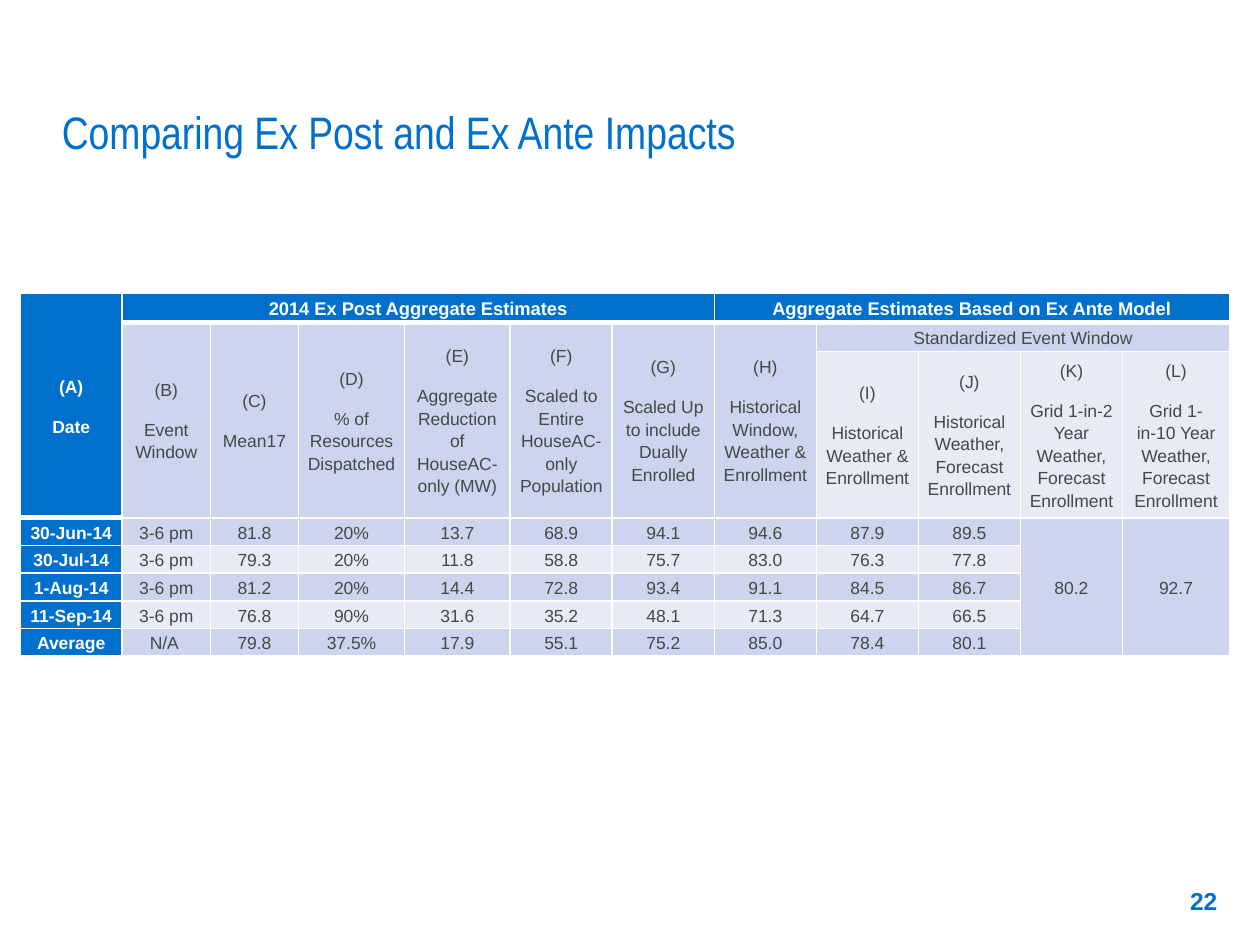
from pptx import Presentation
from pptx.dml.color import RGBColor
from pptx.enum.text import MSO_ANCHOR, MSO_AUTO_SIZE, PP_ALIGN
from pptx.oxml import parse_xml
from pptx.oxml.ns import nsdecls
from pptx.util import Inches, Pt

BLUE = RGBColor(0x00, 0x70, 0xCD)
DARK = RGBColor(0xCC, 0xD5, 0xED)
PALE = RGBColor(0xE7, 0xEB, 0xF6)
GREY = RGBColor(0x46, 0x47, 0x49)
WHITE = RGBColor(0xFF, 0xFF, 0xFF)

# Content
TITLE = "Comparing Ex Post and Ex Ante Impacts"
PAGE = "22"
# (row, column, rows spanned, columns spanned, paragraphs)
HEADS = [
    (0, 0, 3, 1, ["(A)", "Date"]),
    (0, 1, 1, 6, ["2014 Ex Post Aggregate Estimates"]),
    (0, 7, 1, 5, ["Aggregate Estimates Based on Ex Ante Model"]),
    (1, 1, 2, 1, ["(B)", "Event Window"]),
    (1, 2, 2, 1, ["(C)", "Mean17"]),
    (1, 3, 2, 1, ["(D)", "% of Resources Dispatched"]),
    (1, 4, 2, 1, ["(E)", "Aggregate Reduction of HouseAC-only (MW)"]),
    (1, 5, 2, 1, ["(F)", "Scaled to Entire HouseAC-only Population"]),
    (1, 6, 2, 1, ["(G)", "Scaled Up to include Dually Enrolled"]),
    (1, 7, 2, 1, ["(H)", "Historical Window, Weather & Enrollment"]),
    (1, 8, 1, 4, ["Standardized Event Window"]),
    (2, 8, 1, 1, ["(I)", "Historical Weather & Enrollment"]),
    (2, 9, 1, 1, ["(J)", "Historical Weather, Forecast Enrollment"]),
    (2, 10, 1, 1, ["(K)", "Grid 1-in-2 Year Weather, Forecast Enrollment"]),
    (2, 11, 1, 1, ["(L)", "Grid 1-in-10 Year Weather, Forecast Enrollment"]),
]
DAYS = [
    ["30-Jun-14", "3-6 pm", "81.8", "20%", "13.7", "68.9", "94.1", "94.6", "87.9", "89.5"],
    ["30-Jul-14", "3-6 pm", "79.3", "20%", "11.8", "58.8", "75.7", "83.0", "76.3", "77.8"],
    ["1-Aug-14", "3-6 pm", "81.2", "20%", "14.4", "72.8", "93.4", "91.1", "84.5", "86.7"],
    ["11-Sep-14", "3-6 pm", "76.8", "90%", "31.6", "35.2", "48.1", "71.3", "64.7", "66.5"],
    ["Average", "N/A ", "79.8", "37.5%", "17.9", "55.1", "75.2", "85.0", "78.4", "80.1"],
]
YEARS = ["80.2", "92.7"]

# Grid in inches
COLS = [0.81, 0.7, 0.7, 0.84, 0.84] + [0.81] * 6 + [0.85]
TOP = [0.23, 0.23, 1.32]
ROWS = TOP + [0.22] * len(DAYS)


def edge(cell, side, width):
    cell._tc.get_or_add_tcPr().append(parse_xml(
        f'<a:ln{side} {nsdecls("a")} w="{Pt(width)}"><a:solidFill>'
        f'<a:srgbClr val="{WHITE}"/></a:solidFill></a:ln{side}>'))


def style(cell, row, col):
    """White borders, heavier under the blue heads, and banded fill."""
    heavy = row == 0 or (col == 0 and row < len(TOP))
    for side in "LRTB":
        edge(cell, side, 3 if side == "B" and heavy else 1)
    cell.fill.solid()
    cell.fill.fore_color.rgb = (
        BLUE if row == 0 or col == 0 else DARK if row % 2 else PALE)
    cell.margin_left = cell.margin_right = Inches(0.07)
    cell.margin_top = cell.margin_bottom = 0
    cell.vertical_anchor = MSO_ANCHOR.MIDDLE


def font(para, size, color, bold=False, name="Arial"):
    para.font.name, para.font.size = name, Pt(size)
    para.font.bold, para.font.color.rgb = bold, color


def write(cell, lines, row, col):
    cell.text = "\n".join(lines)
    gap = Pt(5 if row < len(TOP) else 3)
    blue = row == 0 or col == 0
    for i, para in enumerate(cell.text_frame.paragraphs):
        para.alignment = PP_ALIGN.CENTER
        para.line_spacing = 1.15
        para.space_before = gap if i else 0
        para.space_after = gap
        font(para, 10.5 if row == 0 and col else 10,
             WHITE if blue else GREY, blue)


def main():
    deck = Presentation()
    deck.slide_width, deck.slide_height = Inches(10), Inches(7.5)
    slide = deck.slides.add_slide(deck.slide_layouts[5])

    # Title
    title = slide.shapes.title
    title.left, title.top = Inches(0.49), Inches(0.57)
    title.width, title.height = Inches(9.01), Inches(0.74)
    frame = title.text_frame
    frame.text = TITLE
    frame.auto_size = MSO_AUTO_SIZE.NONE
    frame.vertical_anchor = MSO_ANCHOR.BOTTOM
    frame.margin_left = 0
    frame.paragraphs[0].alignment = PP_ALIGN.LEFT
    font(frame.paragraphs[0], 26, BLUE, name="Arial Narrow")

    # Table
    table = slide.shapes.add_table(
        len(ROWS), len(COLS), Inches(0.16), Inches(2.33),
        Inches(sum(COLS)), Inches(sum(ROWS))).table
    for col, width in zip(table.columns, COLS):
        col.width = Inches(width)
    for row, height in zip(table.rows, ROWS):
        row.height = Inches(height)

    first = len(TOP)
    parts = HEADS + [(first + r, c, 1, 1, [text])
                     for r, day in enumerate(DAYS) for c, text in enumerate(day)]
    parts += [(first, len(DAYS[0]) + i, len(DAYS), 1, [text])
              for i, text in enumerate(YEARS)]
    for r in range(len(ROWS)):
        for c in range(len(COLS)):
            style(table.cell(r, c), r, c)
            font(table.cell(r, c).text_frame.paragraphs[0], 10, GREY)
    for r, c, down, across, lines in parts:
        cell = table.cell(r, c)
        if down * across > 1:
            cell.merge(table.cell(r + down - 1, c + across - 1))
        write(cell, lines, r, c)

    # Page number
    box = slide.shapes.add_textbox(
        Inches(9.06), Inches(6.95), Inches(0.7), Inches(0.4))
    frame = box.text_frame
    frame.word_wrap = True
    frame.vertical_anchor = MSO_ANCHOR.MIDDLE
    frame.text = PAGE
    frame.paragraphs[0].alignment = PP_ALIGN.RIGHT
    font(frame.paragraphs[0], 14, BLUE, True)

    deck.save("out.pptx")


if __name__ == "__main__":
    main()
